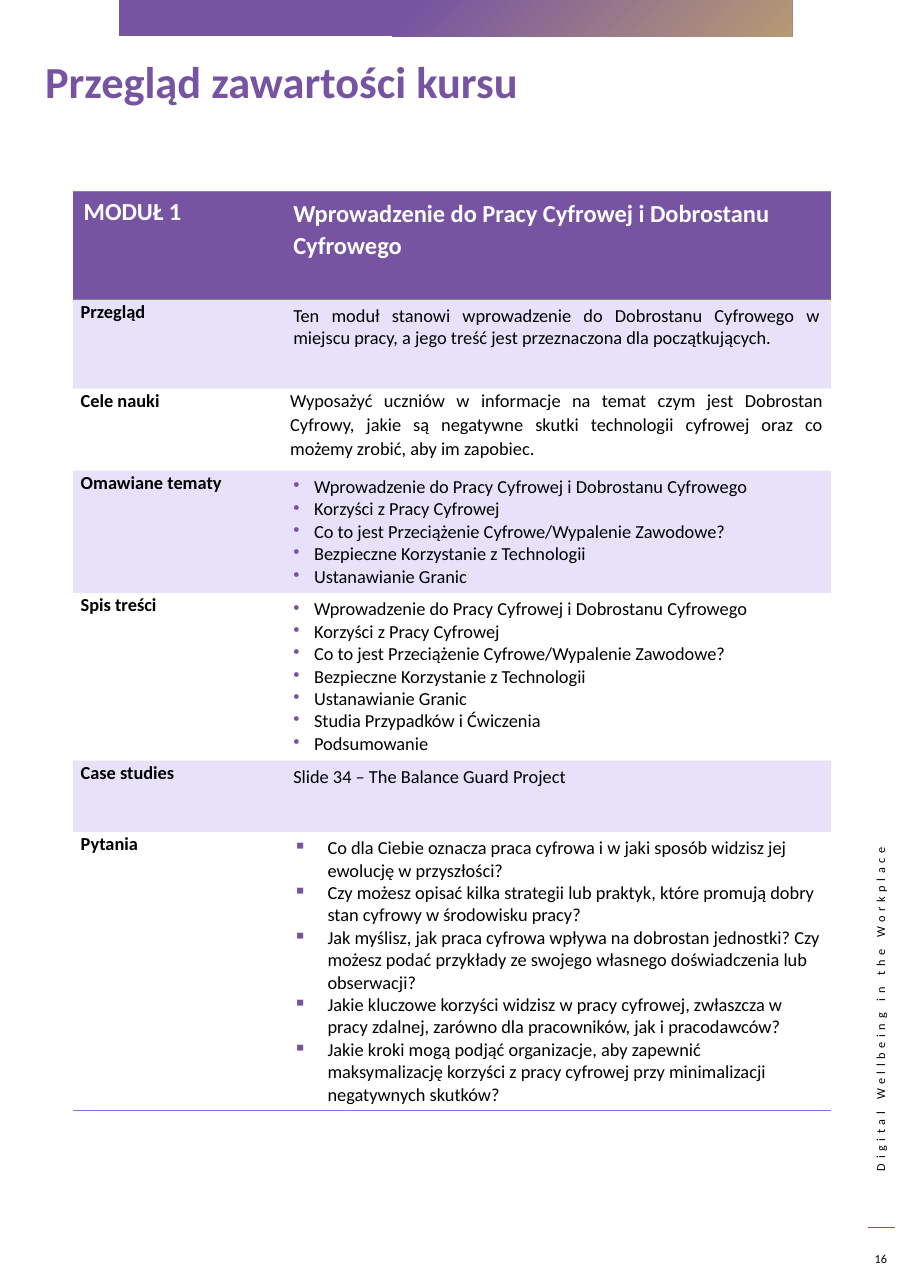
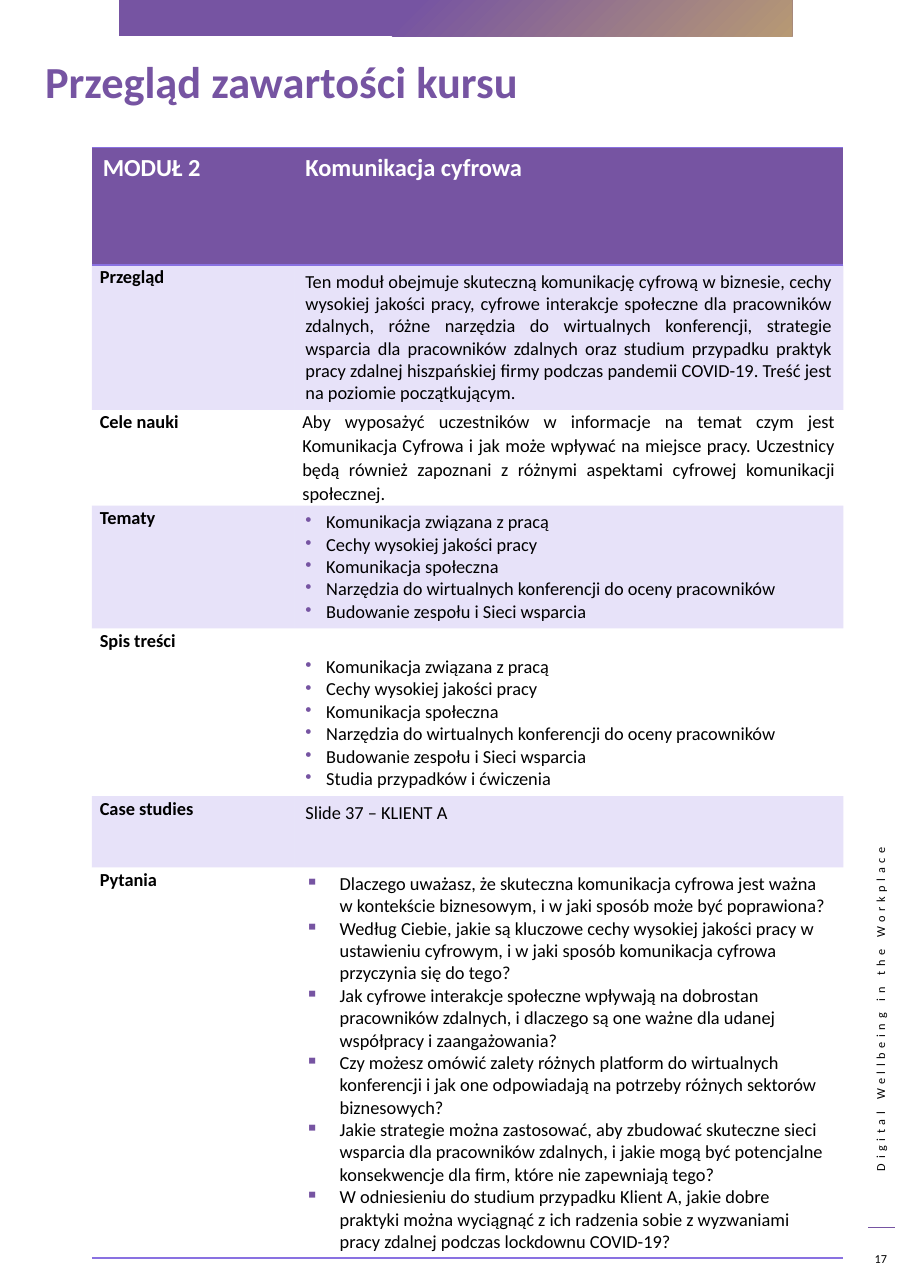
from dataclasses import dataclass
from typing import Optional

from pptx import Presentation
from pptx import util as u
from pptx.dml.color import RGBColor
from pptx.enum import shapes, text
from pptx.oxml import parse_xml
from pptx.oxml.ns import nsdecls, qn

PURPLE, VIOLET, GOLD = "7654A2", "8971E1", "B79974"
WHITE, BLACK = "FFFFFF", "000000"
FONT = "Calibri"
NO_STYLE = "{2D5ABB26-0587-4C30-8999-92F81FD0307C}"
LEFT, CENTER, RIGHT, JUSTIFY = (
    text.PP_ALIGN.LEFT, text.PP_ALIGN.CENTER, text.PP_ALIGN.RIGHT, text.PP_ALIGN.JUSTIFY)


@dataclass(frozen=True)
class ParaStyle:
    size: float = 12
    color: str = BLACK
    bold: bool = False
    align: text.PP_ALIGN = LEFT
    spacing: Optional[float] = None
    bullet: str = ""
    indent: float = 0


@dataclass(frozen=True)
class Insets:
    side: float = 0.25
    top: float = 0.13
    bottom: float = 0.13


@dataclass(frozen=True)
class Row:
    label: str
    lines: tuple[str, ...]
    height: float
    style: ParaStyle
    insets: Insets = Insets()


@dataclass(frozen=True)
class Module:
    page: int
    name: str
    title: str
    left: float
    top: float
    label_width: float
    header_height: float
    header_spacing: Optional[float]
    rows: tuple[Row, ...]


TITLE = ParaStyle(29, PURPLE, True)
HEADER = ParaStyle(16, WHITE, True)
LABEL = ParaStyle(bold=True, spacing=1.07)
PLAIN = ParaStyle()
OVERVIEW = ParaStyle(align=JUSTIFY)
GOAL = ParaStyle(align=JUSTIFY, spacing=1.07)
TOPIC = ParaStyle(bullet="•", indent=0.48)
QUESTION = ParaStyle(bullet="▪", indent=0.79)
TIGHT = Insets(0.18, 0, 0)
VALUE_WIDTH = 12.65

TOPICS_1 = (
    "Wprowadzenie do Pracy Cyfrowej i Dobrostanu Cyfrowego",
    "Korzyści z Pracy Cyfrowej",
    "Co to jest Przeciążenie Cyfrowe/Wypalenie Zawodowe?",
    "Bezpieczne Korzystanie z Technologii",
    "Ustanawianie Granic",
)
TOPICS_2 = (
    "Komunikacja związana z pracą",
    "Cechy wysokiej jakości pracy",
    "Komunikacja społeczna",
    "Narzędzia do wirtualnych konferencji do oceny pracowników",
    "Budowanie zespołu i Sieci wsparcia",
)

MODULES = (
    Module(16, "MODUŁ 1", "Wprowadzenie do Pracy Cyfrowej i Dobrostanu Cyfrowego",
           1.68, 4.41, 4.83, 2.49, 1.07, (
        Row("Przegląd", (
            "Ten moduł stanowi wprowadzenie do Dobrostanu Cyfrowego w miejscu pracy, "
            "a jego treść jest przeznaczona dla początkujących.",), 2.06, OVERVIEW),
        Row("Cele nauki", (
            "Wyposażyć uczniów w informacje na temat czym jest Dobrostan Cyfrowy, jakie są "
            "negatywne skutki technologii cyfrowej oraz co możemy zrobić, aby im zapobiec.",),
            1.89, GOAL, TIGHT),
        Row("Omawiane tematy", TOPICS_1, 2.82, TOPIC),
        Row("Spis treści", TOPICS_1 + ("Studia Przypadków i Ćwiczenia", "Podsumowanie"),
            3.87, TOPIC),
        Row("Case studies", ("Slide 34 – The Balance Guard Project",), 1.64, PLAIN),
        Row("Pytania", (
            "Co dla Ciebie oznacza praca cyfrowa i w jaki sposób widzisz jej ewolucję "
            "w przyszłości?",
            "Czy możesz opisać kilka strategii lub praktyk, które promują dobry stan cyfrowy "
            "w środowisku pracy?",
            "Jak myślisz, jak praca cyfrowa wpływa na dobrostan jednostki? Czy możesz podać "
            "przykłady ze swojego własnego doświadczenia lub obserwacji?",
            "Jakie kluczowe korzyści widzisz w pracy cyfrowej, zwłaszcza w pracy zdalnej, "
            "zarówno dla pracowników, jak i pracodawców?",
            "Jakie kroki mogą podjąć organizacje, aby zapewnić maksymalizację korzyści z pracy "
            "cyfrowej przy minimalizacji negatywnych skutków?",
        ), 6.43, QUESTION),
    )),
    Module(17, "MODUŁ 2", "Komunikacja cyfrowa", 2.12, 3.4, 4.67, 2.71, None, (
        Row("Przegląd", (
            "Ten moduł obejmuje skuteczną komunikację cyfrową w biznesie, cechy wysokiej "
            "jakości pracy, cyfrowe interakcje społeczne dla pracowników zdalnych, różne "
            "narzędzia do wirtualnych konferencji, strategie wsparcia dla pracowników zdalnych "
            "oraz studium przypadku praktyk pracy zdalnej hiszpańskiej firmy podczas pandemii "
            "COVID-19. Treść jest na poziomie początkującym.",), 3.34, OVERVIEW),
        Row("Cele nauki", (
            "Aby wyposażyć uczestników w informacje na temat czym jest Komunikacja Cyfrowa "
            "i jak może wpływać na miejsce pracy. Uczestnicy będą również zapoznani z różnymi "
            "aspektami cyfrowej komunikacji społecznej.",), 2.21, GOAL, TIGHT),
        Row("Tematy", TOPICS_2, 2.83, TOPIC),
        Row("Spis treści", TOPICS_2 + ("Studia przypadków i ćwiczenia",), 3.87, TOPIC,
            Insets(top=0.64)),
        Row("Case studies", ("Slide 37 – KLIENT A",), 1.64, PLAIN),
        Row("Pytania", (
            "Dlaczego uważasz, że skuteczna komunikacja cyfrowa jest ważna w kontekście "
            "biznesowym, i w jaki sposób może być poprawiona?",
            "Według Ciebie, jakie są kluczowe cechy wysokiej jakości pracy w ustawieniu "
            "cyfrowym, i w jaki sposób komunikacja cyfrowa przyczynia się do tego?",
            "Jak cyfrowe interakcje społeczne wpływają na dobrostan pracowników zdalnych, "
            "i dlaczego są one ważne dla udanej współpracy i zaangażowania?",
            "Czy możesz omówić zalety różnych platform do wirtualnych konferencji i jak one "
            "odpowiadają na potrzeby różnych sektorów biznesowych?",
            "Jakie strategie można zastosować, aby zbudować skuteczne sieci wsparcia dla "
            "pracowników zdalnych, i jakie mogą być potencjalne konsekwencje dla firm, które "
            "nie zapewniają tego?",
            "W odniesieniu do studium przypadku Klient A, jakie dobre praktyki można wyciągnąć "
            "z ich radzenia sobie z wyzwaniami pracy zdalnej podczas lockdownu COVID-19?",
        ), 9.01, QUESTION),
    )),
)


def rgb(value: str) -> RGBColor:
    return RGBColor.from_string(value)


def write(tf, lines: tuple[str, ...], style: ParaStyle) -> None:
    tf.word_wrap = True
    for i, line in enumerate(lines):
        p = tf.paragraphs[0] if i == 0 else tf.add_paragraph()
        p.alignment = style.align
        if style.bullet:
            pPr = p._p.get_or_add_pPr()
            pPr.set("marL", str(u.Cm(style.indent)))
            pPr.set("indent", str(-u.Cm(style.indent)))
            pPr.append(parse_xml(
                f'<a:buClr {nsdecls("a")}><a:srgbClr val="{PURPLE}"/></a:buClr>'))
            pPr.append(parse_xml(f'<a:buChar {nsdecls("a")} char="{style.bullet}"/>'))
        if style.spacing:
            p.line_spacing = style.spacing
        r = p.add_run()
        r.text = line
        r.font.name = FONT
        r.font.size = u.Pt(style.size)
        r.font.bold = style.bold
        r.font.color.rgb = rgb(style.color)


def add_text(s, left: float, top: float, width: float, height: float,
             line: str, style: ParaStyle):
    sp = s.shapes.add_textbox(u.Cm(left), u.Cm(top), u.Cm(width), u.Cm(height))
    write(sp.text_frame, (line,), style)
    return sp


def add_frame(s, page: int) -> None:
    side = add_text(s, 15.9, 23.39, 8.81, 0.61, "Digital Wellbeing in the Workplace",
                    ParaStyle(8, align=RIGHT))
    side.rotation = 270
    side.text_frame.paragraphs[0].runs[0].font._element.set("spc", "300")

    rule = s.shapes.add_connector(shapes.MSO_CONNECTOR.STRAIGHT,
                                  u.Cm(20.62), u.Cm(28.3), u.Cm(20.02), u.Cm(28.3))
    rule.line.color.rgb = rgb(PURPLE)
    rule.line.width = u.Pt(0.75)
    rule._element.spPr.append(parse_xml(f'<a:effectLst {nsdecls("a")}/>'))

    band = s.shapes.add_shape(shapes.MSO_SHAPE.RECTANGLE,
                              u.Cm(2.74), u.Cm(0), u.Cm(15.52), u.Cm(0.84))
    band.shadow.inherit = False
    band.line.fill.background()
    band.fill.background()
    spPr = band._element.spPr
    spPr.replace(spPr.find(qn("a:noFill")), parse_xml(
        f'<a:gradFill {nsdecls("a")} rotWithShape="1"><a:gsLst>'
        f'<a:gs pos="0"><a:srgbClr val="{GOLD}"/></a:gs>'
        f'<a:gs pos="58000"><a:srgbClr val="{PURPLE}"/></a:gs></a:gsLst>'
        '<a:path path="circle"><a:fillToRect l="100000" t="100000"/></a:path></a:gradFill>'))

    add_text(s, 0.79, 1.12, 18.06, 2.06, "Przegląd zawartości kursu", TITLE)
    number = add_text(s, 19.81, 28.65, 0.99, 0.74, str(page), ParaStyle(8, align=CENTER))
    number.text_frame.vertical_anchor = text.MSO_ANCHOR.MIDDLE


def fill_cell(cell, lines: tuple[str, ...], style: ParaStyle, insets: Insets,
              color: str = "", alpha: int = 100, borders: str = "") -> None:
    cell.margin_left = cell.margin_right = u.Cm(insets.side)
    cell.margin_top, cell.margin_bottom = u.Cm(insets.top), u.Cm(insets.bottom)
    write(cell.text_frame, lines, style)
    if color:
        cell.fill.solid()
        cell.fill.fore_color.rgb = rgb(color)
    else:
        cell.fill.background()
    tcPr = cell._tc.get_or_add_tcPr()
    if alpha < 100:
        tcPr.find(".//" + qn("a:srgbClr")).append(
            parse_xml(f'<a:alpha {nsdecls("a")} val="{alpha * 1000}"/>'))
    for i, edge in enumerate(borders):
        tcPr.insert(i, parse_xml(
            f'<a:ln{edge} {nsdecls("a")} w="{u.Pt(1)}"><a:solidFill>'
            f'<a:srgbClr val="{VIOLET}"/></a:solidFill></a:ln{edge}>'))


def add_module(s, m: Module) -> None:
    heights = [m.header_height] + [row.height for row in m.rows]
    widths = (m.label_width, VALUE_WIDTH)
    frame = s.shapes.add_table(len(heights), 2, u.Cm(m.left), u.Cm(m.top),
                               u.Cm(sum(widths)), u.Cm(sum(heights)))
    tbl = frame.table
    tbl.first_row = tbl.horz_banding = False
    tbl._tbl.tblPr.find(qn("a:tableStyleId")).text = NO_STYLE
    for column, width in zip(tbl.columns, widths):
        column.width = u.Cm(width)
    for table_row, height in zip(tbl.rows, heights):
        table_row.height = u.Cm(height)

    title_style = ParaStyle(16, WHITE, True, spacing=m.header_spacing)
    for col, (line, style) in enumerate(((m.name, HEADER), (m.title, title_style))):
        fill_cell(tbl.cell(0, col), (line,), style, Insets(), PURPLE, borders="TB")
    for i, row in enumerate(m.rows, 1):
        color, alpha = (VIOLET, 20) if i % 2 else ("", 100)
        borders = "B" if i == len(m.rows) else ""
        fill_cell(tbl.cell(i, 0), (row.label,), LABEL, TIGHT, color, alpha, borders)
        fill_cell(tbl.cell(i, 1), row.lines, row.style, row.insets, color, alpha, borders)


def main() -> None:
    prs = Presentation()
    prs.slide_width, prs.slide_height = u.Cm(21), u.Cm(29.7)
    for m in MODULES:
        s = prs.slides.add_slide(prs.slide_layouts[6])
        add_frame(s, m.page)
        add_module(s, m)
    prs.save("out.pptx")


if __name__ == "__main__":
    main()
